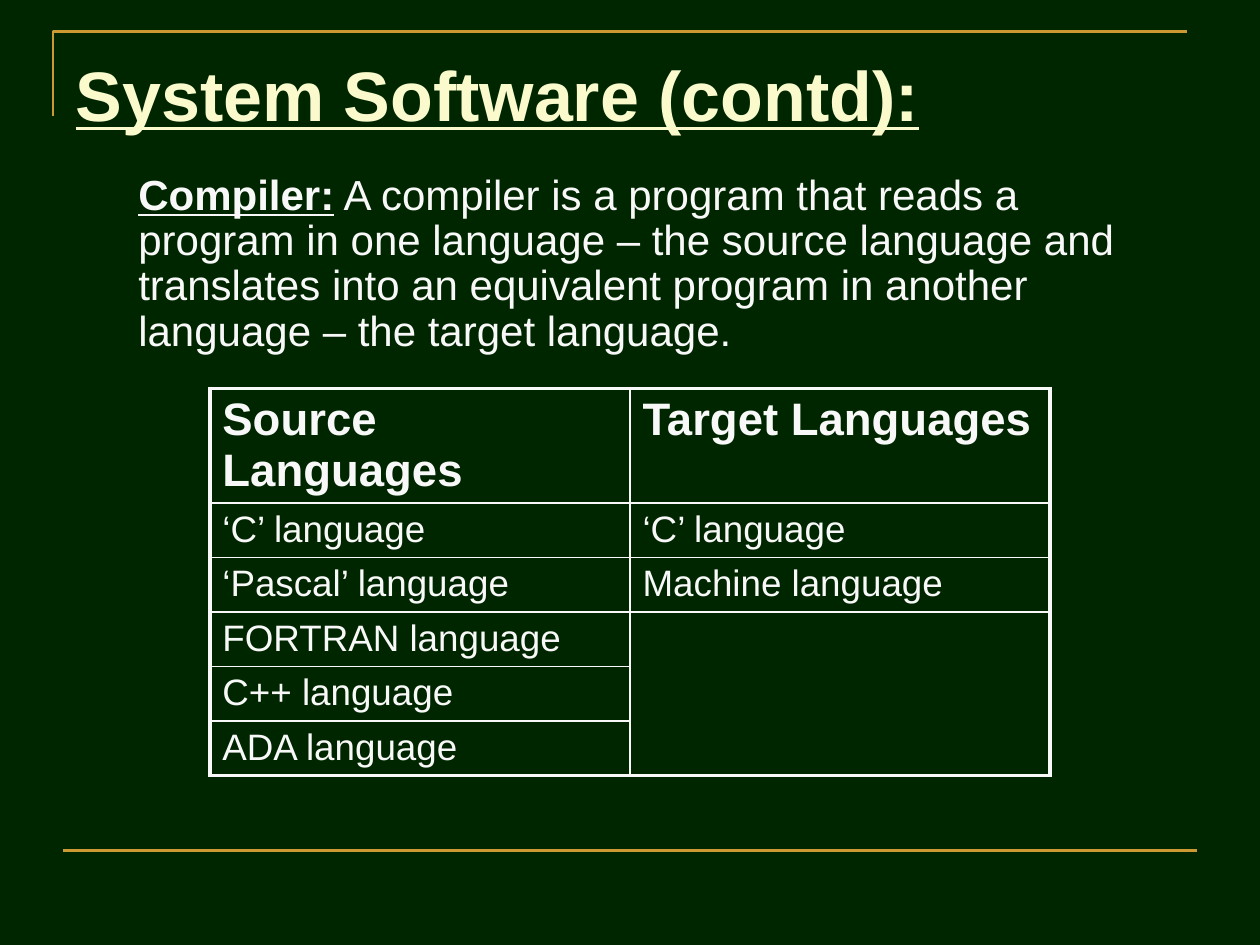
from lxml import etree
from pptx import Presentation, util as u
from pptx.dml.color import RGBColor
from pptx.enum import shapes, text
from pptx.oxml import ns

DARK_GREEN = RGBColor(0x00, 0x26, 0x00)
GOLD = RGBColor(0xCC, 0x99, 0x33)
CREAM = RGBColor(0xFA, 0xFA, 0xCC)
WHITE = RGBColor(0xF8, 0xF8, 0xF8)


def style_run(run, size, color, bold=False, underline=False):
    run.font.name = "Arial"
    run.font.size = u.Pt(size)
    run.font.color.rgb = color
    run.font.bold = bold
    run.font.underline = underline


def set_borders(cell, widths):
    properties = cell._tc.get_or_add_tcPr()
    for index, (side, width) in enumerate(widths.items()):
        border = etree.Element(ns.qn(f"a:ln{side}"), w=str(u.Pt(width)))
        fill = etree.SubElement(border, ns.qn("a:solidFill"))
        etree.SubElement(fill, ns.qn("a:srgbClr"), val=str(WHITE))
        properties.insert(index, border)


prs = Presentation()
prs.slide_width = u.Cm(25.4)
prs.slide_height = u.Cm(19.05)
slide = prs.slides.add_slide(prs.slide_layouts[5])
slide.background.fill.solid()
slide.background.fill.fore_color.rgb = DARK_GREEN

corner_path = slide.shapes.build_freeform(u.Cm(1.07), u.Cm(2.33))
corner_path.add_line_segments(
    [(u.Cm(1.07), u.Cm(0.64)), (u.Cm(23.93), u.Cm(0.64))], close=False)
corner = corner_path.convert_to_shape()
corner.shadow.inherit = False
corner.fill.background()

footer_rule = slide.shapes.add_connector(
    shapes.MSO_CONNECTOR.STRAIGHT, u.Cm(1.27), u.Cm(17.15), u.Cm(24.13), u.Cm(17.15))
etree.SubElement(footer_rule._element.spPr, ns.qn("a:effectLst"))
for rule in (corner, footer_rule):
    rule.line.color.rgb = GOLD
    rule.line.width = u.Pt(1.5)

title = slide.shapes.title
title.left, title.top, title.width, title.height = u.Cm(1.27), u.Cm(0.76), u.Cm(22.86), u.Cm(3.18)
heading = title.text_frame
heading.text = "System Software (contd):"
heading.vertical_anchor = text.MSO_ANCHOR.TOP
heading.margin_top = u.Cm(0.27)
heading.paragraphs[0].alignment = text.PP_ALIGN.LEFT
style_run(heading.paragraphs[0].runs[0], 40, CREAM, bold=True, underline=True)

languages = [
    ("Source Languages", "Target Languages"),
    ("‘C’ language", "‘C’ language"),
    ("‘Pascal’ language", "Machine language"),
    ("FORTRAN language", ""),
    ("C++ language", ""),
    ("ADA language", ""),
]
last_row = len(languages) - 1
table = slide.shapes.add_table(
    len(languages), 2, u.Cm(4.23), u.Cm(7.83), u.Cm(16.94), u.Cm(7.8)).table
table.first_row = False
table.horz_banding = False
for column in table.columns:
    column.width = u.Cm(8.47)
for r, names in enumerate(languages):
    table.rows[r].height = u.Cm(1.1 if r else 2.3)
    for c, name in enumerate(names):
        cell = table.cell(r, c)
        cell.text = name
        cell.fill.background()
        for run in cell.text_frame.paragraphs[0].runs:
            style_run(run, 21 if r else 26, WHITE, bold=r == 0)
        set_borders(cell, {
            "L": 2.25 if c == 0 else 1,
            "R": 2.25 if c == 1 else 1,
            "T": 2.25 if r == 0 else 1,
            "B": 2.25 if r == last_row or (r, c) == (3, 1) else 1,
        })
table.cell(3, 1).merge(table.cell(last_row, 1))

definition = slide.shapes.add_textbox(u.Cm(2.54), u.Cm(3.38), u.Cm(20.32), u.Cm(3.91)).text_frame
definition.word_wrap = True
sentence = definition.paragraphs[0]
sentence.line_spacing = 0.9
term, meaning = sentence.add_run(), sentence.add_run()
term.text = "Compiler:"
meaning.text = (" A compiler is a program that reads a program in one language – the source "
                "language and translates into an equivalent program in another language – "
                "the target language.")
style_run(term, 24, WHITE, bold=True, underline=True)
style_run(meaning, 24, WHITE)

prs.save("out.pptx")
